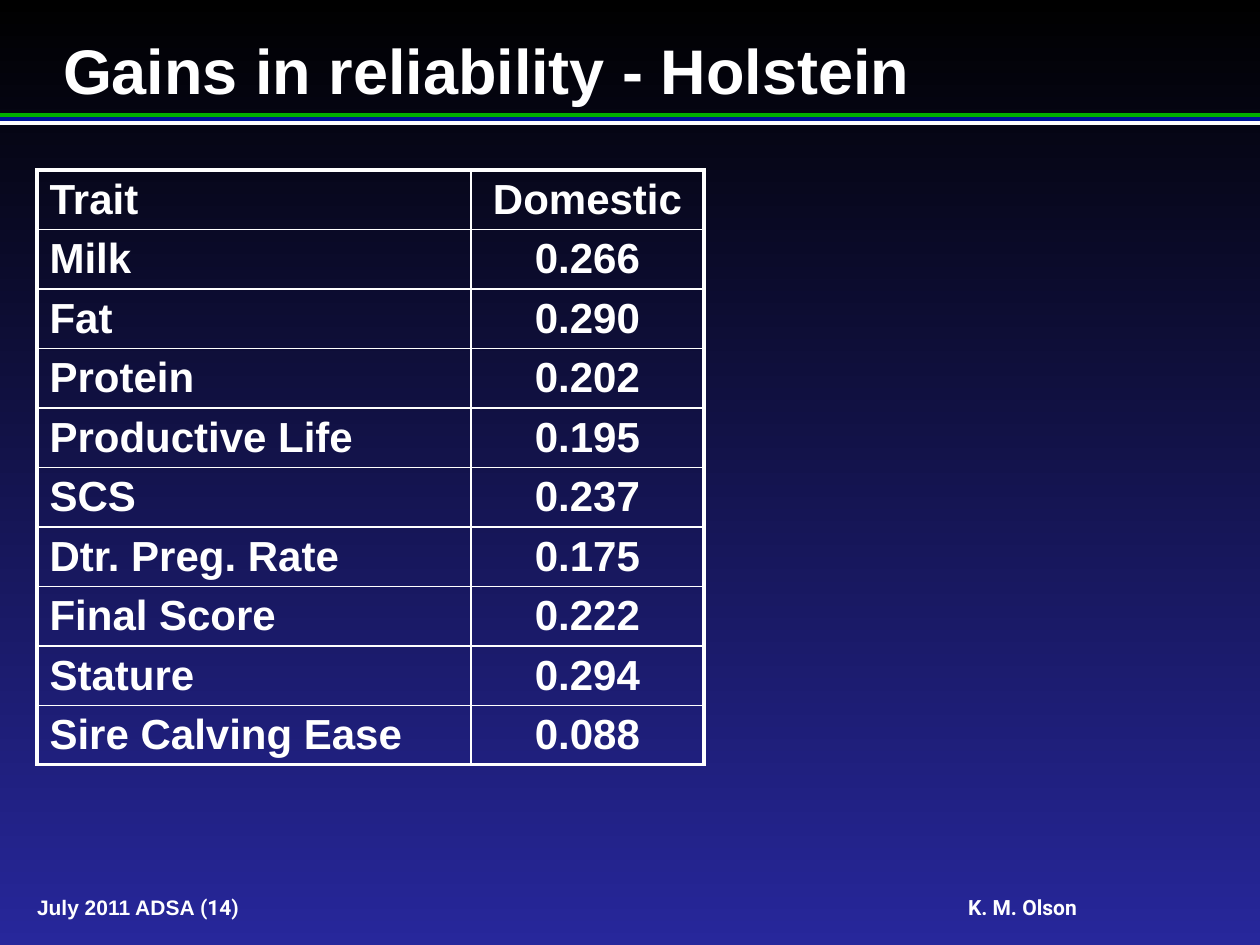
from lxml import etree
from pptx import Presentation, util as u
from pptx.dml.color import RGBColor
from pptx.enum import shapes, text
from pptx.oxml import ns

COLORS = {"top": "000000", "bottom": "27279B", "green": "01AF00",
          "blue": "001799", "white": "FFFFFF"}
SCALE = 914400 / 126
GAINS = [("Trait", "Domestic"), ("Milk", "0.266"), ("Fat", "0.290"),
         ("Protein", "0.202"), ("Productive Life", "0.195"), ("SCS", "0.237"),
         ("Dtr. Preg. Rate", "0.175"), ("Final Score", "0.222"),
         ("Stature", "0.294"), ("Sire Calving Ease", "0.088")]


def px(length):
    """Turn px into EMU."""
    return u.Emu(round(length * SCALE))


def rgb(name):
    """Look up a colour of the slide."""
    return RGBColor.from_string(COLORS[name])


def assign(target, values):
    """Set attributes from a dict of format values."""
    for key, value in values.items():
        setattr(target, key, value)


def write(paragraph, words, size, font="Arial"):
    """Add a bold white run to a paragraph."""
    run = paragraph.add_run()
    run.text = words
    assign(run.font, {"size": u.Pt(size), "name": font, "bold": True})
    run.font.color.rgb = rgb("white")


def place(part, box):
    """Move a part to its box."""
    assign(part, dict(zip(("left", "top", "width", "height"), map(px, box))))


def format_frame(frame, anchor, top=0):
    """Set wrapping, anchor and insets of a text frame."""
    assign(frame, {"word_wrap": True, "auto_size": text.MSO_AUTO_SIZE.NONE,
                   "vertical_anchor": anchor, "margin_left": 0,
                   "margin_right": 0, "margin_top": px(top), "margin_bottom": 0})


def paint_background(slide):
    """Fill the slide from black at the top to blue at the bottom."""
    fill = slide.background.fill
    fill.gradient()
    fill.gradient_angle = 270
    for stop, name, position in zip(fill.gradient_stops, ("top", "bottom"), (0, 1)):
        stop.color.rgb = rgb(name)
        stop.position = position


def add_rules(slide, box):
    """Draw the three coloured bars under the title."""
    left, top, width, height = box
    for name, offset in (("green", 0), ("white", 8), ("blue", 4)):
        bar = slide.shapes.add_shape(
            shapes.MSO_SHAPE.RECTANGLE,
            *map(px, (left, top + offset, width, height - 8)))
        bar.shadow.inherit = False
        bar.fill.solid()
        bar.fill.fore_color.rgb = rgb(name)
        bar.line.fill.background()


def add_title(slide, box):
    """Write the slide title in its placeholder."""
    title = slide.shapes.title
    place(title, box)
    format_frame(title.text_frame, text.MSO_ANCHOR.TOP, top=7)
    heading = title.text_frame.paragraphs[0]
    heading.alignment = text.PP_ALIGN.LEFT
    write(heading, "Gains in reliability - Holstein", 36)


def draw_border(cell, side, points):
    """Draw one white side of a cell."""
    line = etree.SubElement(cell._tc.get_or_add_tcPr(), ns.qn(f"a:ln{side}"),
                            w=str(u.Pt(points)))
    fill = etree.SubElement(line, ns.qn("a:solidFill"))
    etree.SubElement(fill, ns.qn("a:srgbClr"), val=COLORS["white"])


def add_gains(slide, box):
    """Place the table of gains by trait."""
    last_row, last_column = len(GAINS) - 1, len(GAINS[0]) - 1
    table = slide.shapes.add_table(len(GAINS), len(GAINS[0]), *map(px, box)).table
    assign(table, {"first_row": False, "horz_banding": False})
    trait_width = 434
    for column, width in zip(table.columns, (trait_width, box[2] - trait_width)):
        column.width = px(width)
    for row, record in enumerate(GAINS):
        for column, words in enumerate(record):
            cell = table.cell(row, column)
            edges = {"L": column == 0, "R": column == last_column,
                     "T": row == 0, "B": row == last_row}
            for side, outer in edges.items():
                draw_border(cell, side, 2.25 if outer else 1)
            cell.fill.background()
            assign(cell, {"margin_top": px(5), "margin_bottom": px(5),
                          "vertical_anchor": text.MSO_ANCHOR.MIDDLE})
            entry = cell.text_frame.paragraphs[0]
            entry.alignment = text.PP_ALIGN.CENTER if column else text.PP_ALIGN.LEFT
            write(entry, words, 24)


def add_footer(slide, box):
    """Write the meeting, slide number and author on one line."""
    frame = slide.shapes.add_textbox(*map(px, box)).text_frame
    format_frame(frame, text.MSO_ANCHOR.MIDDLE)
    footer = frame.paragraphs[0]
    tabs = etree.SubElement(footer._p.get_or_add_pPr(), ns.qn("a:tabLst"))
    etree.SubElement(tabs, ns.qn("a:tab"), pos=str(px(931)), algn="l")
    write(footer, "July 2011 ADSA ", 12)
    write(footer, "(14)\tK. M. Olson", 12, "Roboto")


def main():
    """Build and save the slide."""
    deck = Presentation()
    assign(deck, {"slide_width": px(1260), "slide_height": px(945)})
    slide = deck.slides.add_slide(deck.slide_layouts[5])
    paint_background(slide)
    add_rules(slide, (0, 113, 1260, 12))
    add_footer(slide, (37, 895, 1190, 25))
    add_title(slide, (63, 25, 1134, 76))
    add_gains(slide, (37, 170, 667, 595))
    deck.save("out.pptx")


if __name__ == "__main__":
    main()
